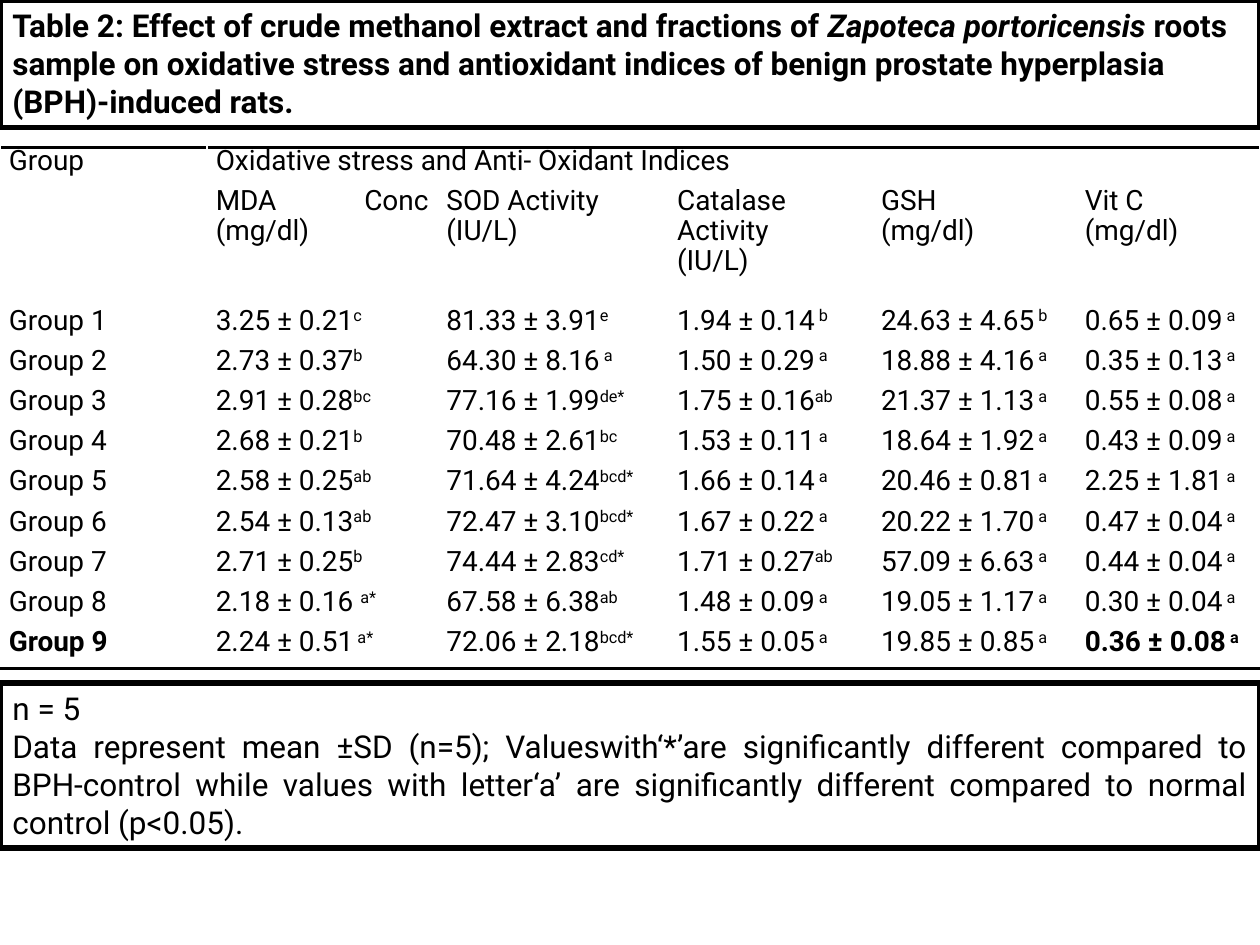
"""Build the slide with the table of oxidative stress and antioxidant indices."""
from lxml import etree
from pptx import Presentation
from pptx import util as u
from pptx.dml.color import RGBColor
from pptx.enum import shapes, text
from pptx.oxml.ns import qn

FONT, BLACK, WHITE = "Roboto", "000000", "FFFFFF"
TITLE = [
    ("Table 2: Effect of crude methanol extract and fractions of ", {}),
    ("Zapoteca portoricensis", {"italic": True}),
    (" roots sample on oxidative stress and antioxidant indices of benign prostate "
     "hyperplasia (BPH)-induced rats.", {}),
]
SAMPLE_SIZE = "n = 5"
NOTE = ("Data represent mean ±SD (n=5); Valueswith‘*’are significantly different compared to "
        "BPH-control while values with letter‘a’ are significantly different compared to "
        "normal control (p<0.05).")
HEADINGS = ["Group", "Oxidative stress and Anti- Oxidant Indices"]
INDICES = [["MDA Conc (mg/dl)"], ["SOD Activity ", "(IU/L)"], ["Catalase Activity ", "(IU/L)"],
           ["GSH ", "(mg/dl)"], ["Vit C ", "(mg/dl)"]]
RESULTS = [
    ["3.25 ± 0.21|c", "81.33 ± 3.91|e", "1.94 ± 0.14| b", "24.63 ± 4.65| b", "0.65 ± 0.09| a"],
    ["2.73 ± 0.37|b", "64.30 ± 8.16| a", "1.50 ± 0.29| a", "18.88 ± 4.16| a", "0.35 ± 0.13| a"],
    ["2.91 ± 0.28|bc", "77.16 ± 1.99|de*", "1.75 ± 0.16|ab", "21.37 ± 1.13| a", "0.55 ± 0.08| a"],
    ["2.68 ± 0.21|b", "70.48 ± 2.61|bc", "1.53 ± 0.11| a", "18.64 ± 1.92| a", "0.43 ± 0.09| a"],
    ["2.58 ± 0.25|ab", "71.64 ± 4.24|bcd*", "1.66 ± 0.14| a", "20.46 ± 0.81| a", "2.25 ± 1.81| a"],
    ["2.54 ± 0.13|ab", "72.47 ± 3.10|bcd*", "1.67 ± 0.22| a", "20.22 ± 1.70| a", "0.47 ± 0.04| a"],
    ["2.71 ± 0.25|b", "74.44 ± 2.83|cd*", "1.71 ± 0.27|ab", "57.09 ± 6.63| a", "0.44 ± 0.04| a"],
    ["2.18 ± 0.16 |a*", "67.58 ± 6.38|ab", "1.48 ± 0.09| a", "19.05 ± 1.17| a", "0.30 ± 0.04| a"],
    ["2.24 ± 0.51| a*", "72.06 ± 2.18|bcd*", "1.55 ± 0.05| a", "19.85 ± 0.85| a", "0.36 ± 0.08| a"],
]
COLUMN_WIDTHS = [4.17, 4.65, 4.65, 4.11, 4.11, 3.71]
ROW_HEIGHT, INDEX_HEIGHT = 0.81, 2.41
SLIDE_WIDTH, SLIDE_HEIGHT = 25.4, 19.05
JUSTIFY = text.PP_ALIGN.JUSTIFY


def color(value):
    return RGBColor.from_string(value)


def add_text(paragraph, content, size=16, bold=False, italic=False, raised=False,
             align=JUSTIFY, spacing=None):
    paragraph.alignment = align
    if spacing:
        paragraph.line_spacing = u.Pt(spacing)
    run = paragraph.add_run()
    run.text = content
    font = run.font
    font.name, font.size, font.bold, font.italic = FONT, u.Pt(size), bold, italic
    font.color.rgb = color(BLACK)
    if raised:
        run._r.get_or_add_rPr().set("baseline", "30000")


def add_box(slide, top, height):
    shape = slide.shapes.add_shape(shapes.MSO_SHAPE.RECTANGLE, u.Cm(0), u.Cm(top),
                                   u.Cm(SLIDE_WIDTH), u.Cm(height))
    shape.shadow.inherit = False
    shape.fill.solid()
    shape.fill.fore_color.rgb = color(WHITE)
    shape.line.color.rgb = color(BLACK)
    shape.line.width = u.Pt(3.15)
    frame = shape.text_frame
    frame.word_wrap = True
    frame.vertical_anchor = text.MSO_ANCHOR.TOP
    frame.auto_size = text.MSO_AUTO_SIZE.SHAPE_TO_FIT_TEXT
    return frame


def fill_cell(cell, lines, bold=False):
    frame = cell.text_frame
    for number, line in enumerate(lines):
        paragraph = frame.add_paragraph() if number else frame.paragraphs[0]
        value, _, letters = line.partition("|")
        add_text(paragraph, value, bold=bold, spacing=17)
        if letters:
            add_text(paragraph, letters, bold=bold, raised=True, spacing=17)


def add_border(cell, side):
    properties = cell._tc.get_or_add_tcPr()
    line = etree.Element(qn(f"a:{side}"), w=str(u.Pt(2)))
    fill = etree.SubElement(line, qn("a:solidFill"))
    etree.SubElement(fill, qn("a:srgbClr"), val=BLACK)
    properties.insert(0, line)


def add_results(slide, top):
    row_count = len(RESULTS) + 2
    heights = [ROW_HEIGHT, INDEX_HEIGHT] + [ROW_HEIGHT] * len(RESULTS)
    table = slide.shapes.add_table(row_count, len(COLUMN_WIDTHS), u.Cm(0), u.Cm(top),
                                   u.Cm(SLIDE_WIDTH), u.Cm(sum(heights))).table
    table.first_row = table.horz_banding = False
    for column, width in zip(table.columns, COLUMN_WIDTHS):
        column.width = u.Cm(width)
    for row, height in zip(table.rows, heights):
        row.height = u.Cm(height)
    for cell in table.iter_cells():
        cell.margin_left = cell.margin_right = u.Cm(0.18)
        cell.margin_top = cell.margin_bottom = 0
        cell.fill.solid()
        cell.fill.fore_color.rgb = color(WHITE)
    for column in range(len(COLUMN_WIDTHS)):
        add_border(table.cell(0, column), "lnT")
        add_border(table.cell(row_count - 1, column), "lnB")
    table.cell(0, 0).merge(table.cell(1, 0))
    table.cell(0, 1).merge(table.cell(0, len(COLUMN_WIDTHS) - 1))
    for column, heading in enumerate(HEADINGS):
        fill_cell(table.cell(0, column), [heading])
    for column, lines in enumerate(INDICES, 1):
        fill_cell(table.cell(1, column), lines)
    for group, values in enumerate(RESULTS, 1):
        for column, value in enumerate([f"Group {group}"] + values):
            bold = group == len(RESULTS) and column in (0, len(values))
            fill_cell(table.cell(group + 1, column), [value], bold)


def main():
    presentation = Presentation()
    presentation.slide_width, presentation.slide_height = u.Cm(SLIDE_WIDTH), u.Cm(SLIDE_HEIGHT)
    slide = presentation.slides.add_slide(presentation.slide_layouts[6])
    title = add_box(slide, 0, 2.57).paragraphs[0]
    for content, style in TITLE:
        add_text(title, content, size=18, bold=True, align=text.PP_ALIGN.LEFT, **style)
    add_results(slide, 2.97)
    footer = add_box(slide, 13.77, 3.33)
    add_text(footer.paragraphs[0], SAMPLE_SIZE, size=18, align=text.PP_ALIGN.LEFT)
    add_text(footer.add_paragraph(), NOTE, size=18)
    presentation.save("out.pptx")


if __name__ == "__main__":
    main()
